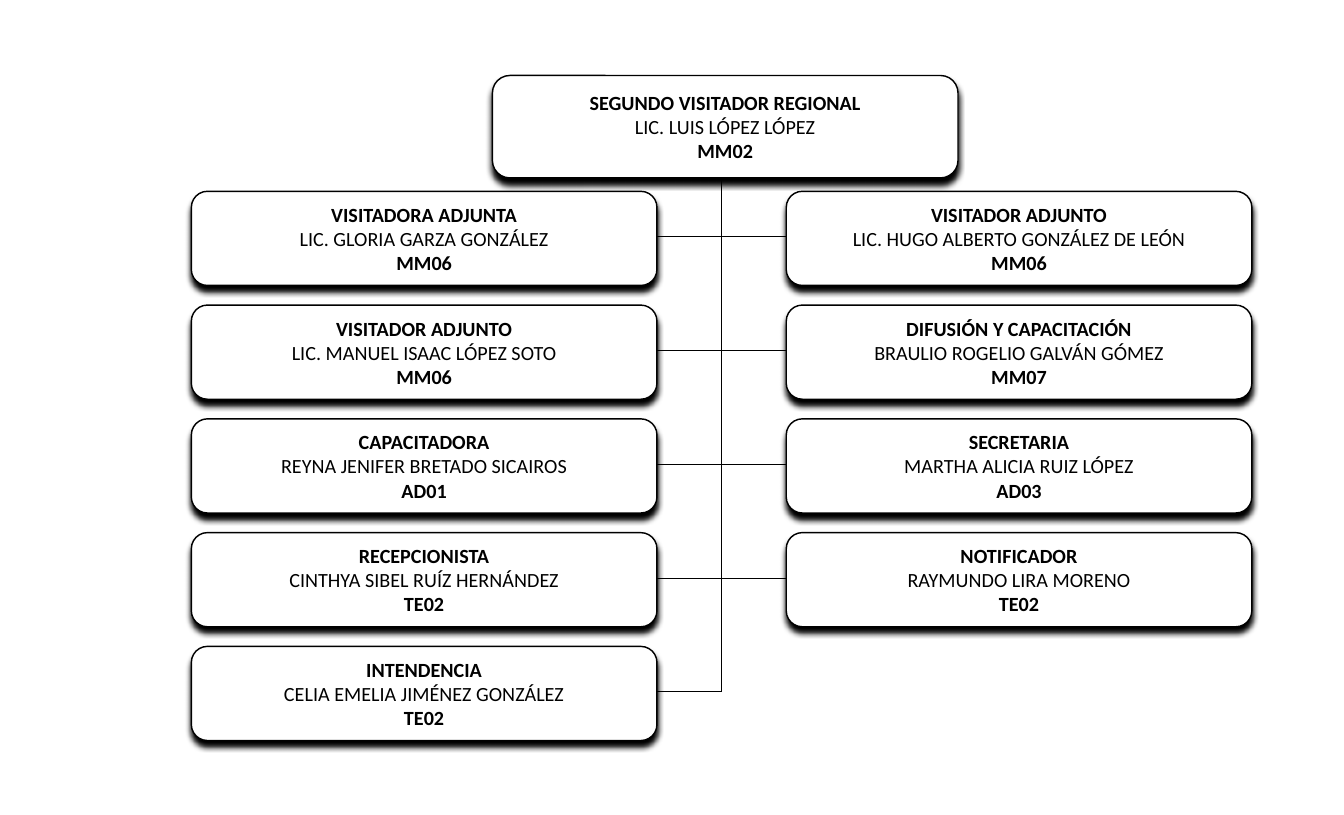
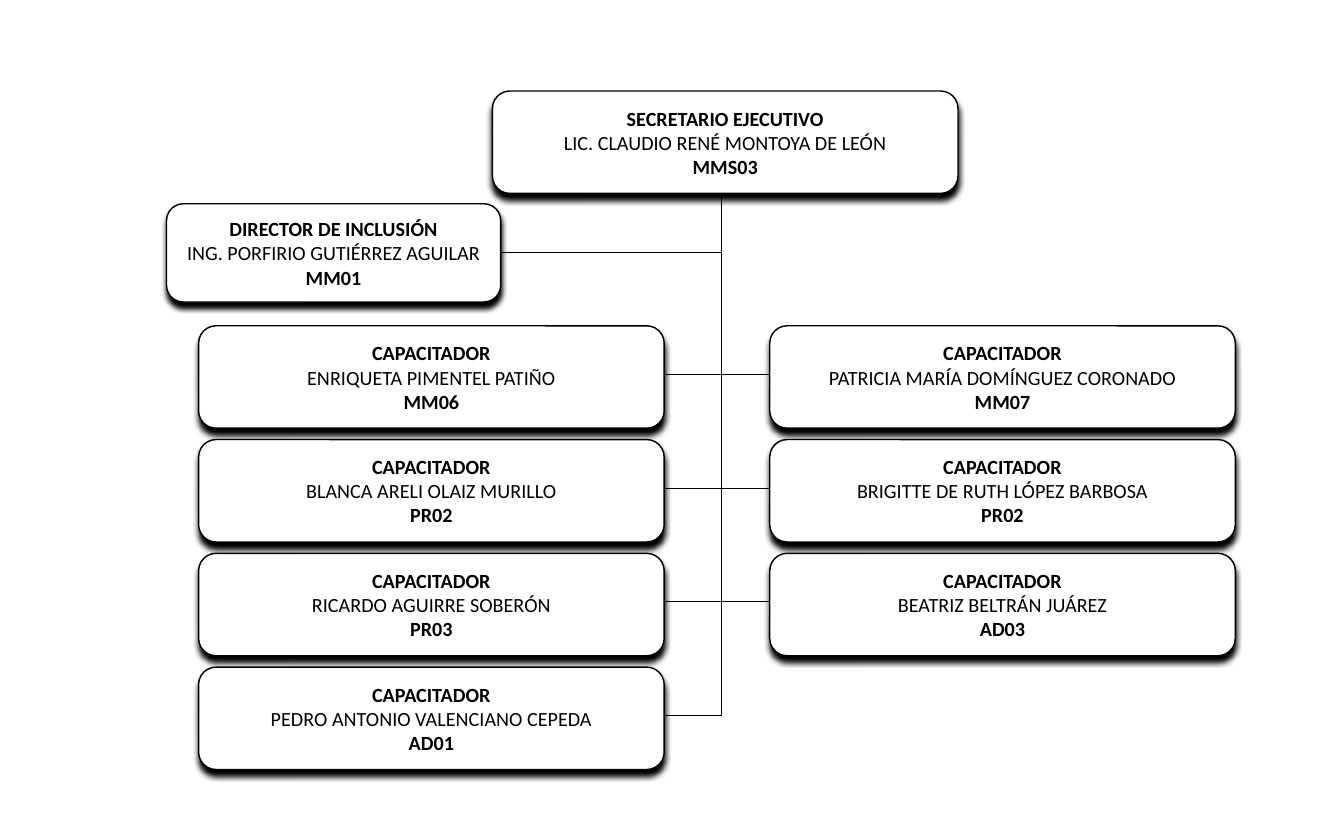
"""Build two staff charts with a head box, a trunk and paired rows."""
from itertools import zip_longest
from lxml.etree import SubElement as Sub
from pptx import Presentation
from pptx.dml.color import RGBColor as RGB
from pptx.enum.shapes import MSO_CONNECTOR as Link, MSO_SHAPE as Kind
from pptx.enum.text import MSO_ANCHOR as Anchor, PP_ALIGN as Align
from pptx.oxml.ns import qn
from pptx.util import Inches, Pt

CHARTS = [
    {
        "head": ("SEGUNDO VISITADOR REGIONAL", "LIC. LUIS LÓPEZ LÓPEZ", "MM02"),
        "aide": None,
        "left": [
            ("VISITADORA ADJUNTA", "LIC. GLORIA GARZA GONZÁLEZ", "MM06"),
            ("VISITADOR ADJUNTO", "LIC. MANUEL ISAAC LÓPEZ SOTO", "MM06"),
            ("CAPACITADORA", "REYNA JENIFER BRETADO SICAIROS", "AD01"),
            ("RECEPCIONISTA", "CINTHYA SIBEL RUÍZ HERNÁNDEZ", "TE02"),
            ("INTENDENCIA", "CELIA EMELIA JIMÉNEZ GONZÁLEZ", "TE02"),
        ],
        "right": [
            ("VISITADOR ADJUNTO", "LIC. HUGO ALBERTO GONZÁLEZ DE LEÓN", "MM06"),
            ("DIFUSIÓN Y CAPACITACIÓN", "BRAULIO ROGELIO GALVÁN GÓMEZ", "MM07"),
            ("SECRETARIA", "MARTHA ALICIA RUIZ LÓPEZ", "AD03"),
            ("NOTIFICADOR", "RAYMUNDO LIRA MORENO", "TE02"),
        ],
        "spots": {"head": 0.73, "row": 1.85, "left": 1.85, "right": 7.6,
                  "high": 0.91, "drop": 0.44},
    },
    {
        "head": ("SECRETARIO EJECUTIVO", "LIC. CLAUDIO RENÉ MONTOYA DE LEÓN", "MMS03"),
        "aide": ("DIRECTOR DE INCLUSIÓN", "ING. PORFIRIO GUTIÉRREZ AGUILAR", "MM01"),
        "left": [
            ("CAPACITADOR", "ENRIQUETA PIMENTEL PATIÑO", "MM06"),
            ("CAPACITADOR", "BLANCA ARELI OLAIZ MURILLO", "PR02"),
            ("CAPACITADOR", "RICARDO AGUIRRE SOBERÓN", "PR03"),
            ("CAPACITADOR", "PEDRO ANTONIO VALENCIANO CEPEDA", "AD01"),
        ],
        "right": [
            ("CAPACITADOR", "PATRICIA MARÍA DOMÍNGUEZ CORONADO", "MM07"),
            ("CAPACITADOR", "BRIGITTE DE RUTH LÓPEZ BARBOSA", "PR02"),
            ("CAPACITADOR", "BEATRIZ BELTRÁN JUÁREZ", "AD03"),
        ],
        "spots": {"head": 0.88, "row": 3.15, "left": 1.92, "right": 7.44,
                  "high": 0.99, "drop": 0.47},
    },
]


class Theme:
    ink = RGB(0, 0, 0)
    paper = RGB(255, 255, 255)
    font = "Calibri"
    size = Pt(14)
    edge = Pt(1)
    wire = Pt(0.75)
    shade = Pt(4)


WIDE, TALL, PITCH, TRUNK = 4.5, 0.99, 1.1, 6.97
HEAD_X = 4.76
AIDE = (1.61, 1.97, 3.23, 0.95)
FRAME = {"word_wrap": False, "vertical_anchor": Anchor.MIDDLE,
         "margin_left": Inches(0.17), "margin_right": Inches(0.17),
         "margin_top": Inches(0.09), "margin_bottom": Inches(0.09)}
FONT = {"name": Theme.font, "size": Theme.size}


def assign(item, values):
    for key, value in values.items():
        setattr(item, key, value)


def add_shade(shape):
    effects = Sub(shape._element.spPr, qn("a:effectLst"))
    cast = Sub(effects, qn("a:outerShdw"), blurRad=str(Theme.shade),
               dist=str(Theme.shade), dir="5400000", rotWithShape="0")
    Sub(cast, qn("a:srgbClr"), val=str(Theme.ink))


def add_box(slide, post, *place):
    box = slide.shapes.add_shape(Kind.ROUNDED_RECTANGLE, *map(Inches, place))
    box.adjustments[0] = 0.17
    box.fill.solid()
    box.fill.fore_color.rgb = Theme.paper
    box.line.color.rgb = Theme.ink
    box.line.width = Theme.edge
    add_shade(box)
    frame = box.text_frame
    assign(frame, FRAME)
    for n, (text, bold) in enumerate(zip(post, (True, False, True))):
        para = frame.add_paragraph() if n else frame.paragraphs[0]
        para.alignment = Align.CENTER
        run = para.add_run()
        run.text = text
        assign(run.font, FONT | {"bold": bold})
        run.font.color.rgb = Theme.ink


def add_wire(slide, *ends):
    wire = slide.shapes.add_connector(Link.STRAIGHT, *map(Inches, ends))
    wire.line.color.rgb = Theme.ink
    wire.line.width = Theme.wire
    Sub(wire._element.spPr, qn("a:effectLst"))


def draw(slide, chart):
    spots = chart["spots"]
    high, drop = spots["high"], spots["drop"]
    add_box(slide, chart["head"], HEAD_X, spots["head"], WIDE, TALL)
    last = spots["row"] + (len(chart["left"]) - 1) * PITCH + drop
    add_wire(slide, TRUNK, spots["head"] + TALL, TRUNK, last)
    if chart["aide"]:
        x, y, wide, _ = AIDE
        add_wire(slide, x + wide, y + drop, TRUNK, y + drop)
        add_box(slide, chart["aide"], *AIDE)
    for n, pair in enumerate(zip_longest(chart["left"], chart["right"])):
        top = spots["row"] + n * PITCH
        end = spots["right"] if pair[1] else TRUNK
        add_wire(slide, spots["left"] + WIDE, top + drop, end, top + drop)
        for side, post in zip(("left", "right"), pair):
            if post:
                add_box(slide, post, spots[side], top, WIDE, high)


def main():
    deck = Presentation()
    assign(deck, {"slide_width": Inches(12.99), "slide_height": Inches(7.88)})
    for chart in CHARTS:
        draw(deck.slides.add_slide(deck.slide_layouts[6]), chart)
    deck.save("out.pptx")


if __name__ == "__main__":
    main()
